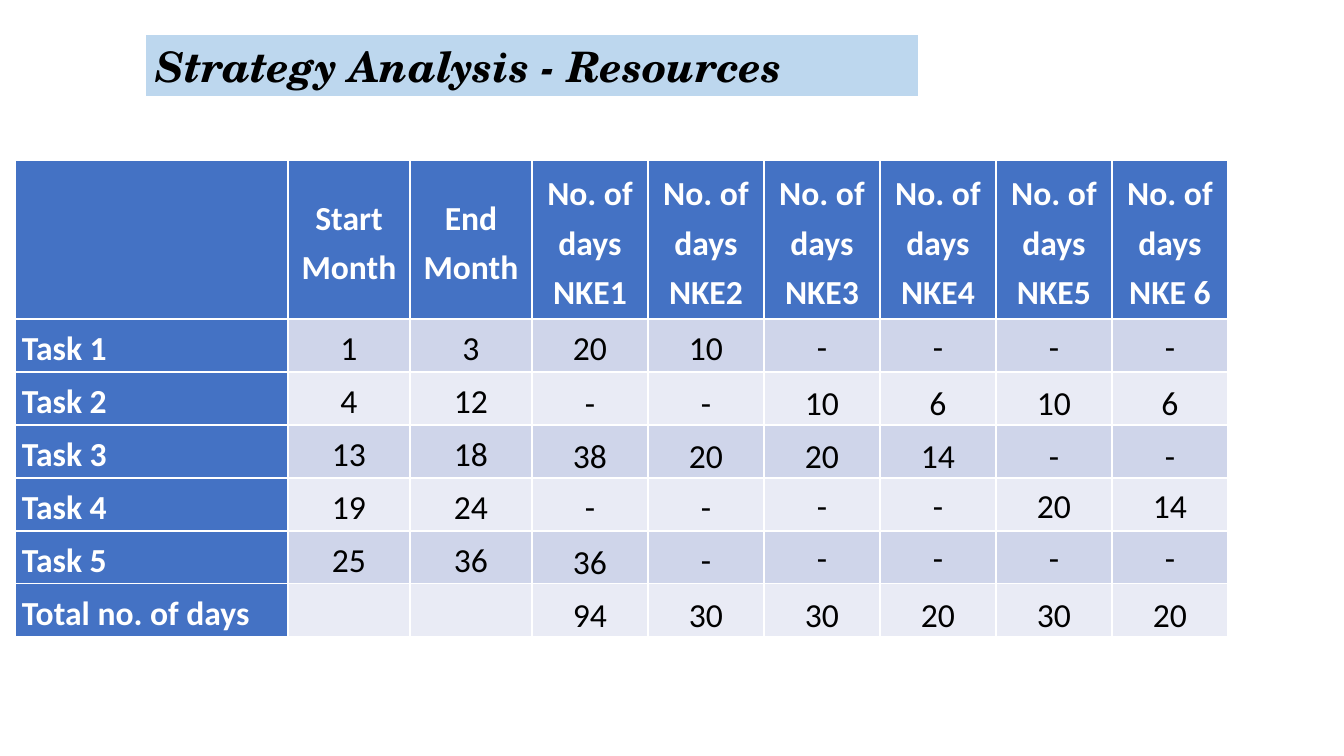
from dataclasses import dataclass

from pptx import Presentation
from pptx import util as u
from pptx.dml.color import RGBColor as Rgb
from pptx.enum import shapes, text

PX = 12192000 / 1344


def px(count):
    return u.Emu(round(count * PX))


@dataclass
class Theme:
    white: str = "FFFFFF"
    black: str = "000000"
    banner: str = "BDD7EE"
    head: str = "4472C4"
    bands: tuple = ("CFD5EA", "E9EBF5")
    serif: str = "TeX Gyre Schola"
    sans: str = "Calibri"
    large: int = 30
    body: int = 24


class Deck:
    """Draws styled elements on one blank slide."""

    def __init__(self, theme):
        self.theme = theme
        self.file = Presentation()
        self.file.slide_width, self.file.slide_height = px(1344), px(756)
        self.slide = self.file.slides.add_slide(self.file.slide_layouts[6])

    def fill(self, item, color):
        item.fill.solid()
        item.fill.fore_color.rgb = Rgb.from_string(color)

    def style(self, para, name, size, color, bold, slant=False):
        for run in para.runs:
            font = run.font
            font.name, font.size = name, u.Pt(size)
            font.bold, font.italic = bold, slant
            font.color.rgb = Rgb.from_string(color)

    def title(self, words, *box):
        look = self.theme
        shape = self.slide.shapes.add_shape(
            shapes.MSO_SHAPE.RECTANGLE, *map(px, box))
        shape.shadow.inherit = False
        shape.line.fill.background()
        self.fill(shape, look.banner)
        frame = shape.text_frame
        frame.text = words
        frame.word_wrap = True
        frame.auto_size = text.MSO_AUTO_SIZE.SHAPE_TO_FIT_TEXT
        para = frame.paragraphs[0]
        para.alignment = text.PP_ALIGN.LEFT
        self.style(para, look.serif, look.large, look.black, True, True)

    def table(self, left, top, widths, heights, rows, anchors):
        table = self.slide.shapes.add_table(
            len(rows), len(widths), px(left), px(top),
            px(sum(widths)), px(sum(heights))).table
        table.first_col = True
        for col, width in zip(table.columns, widths):
            col.width = px(width)
        for row, height in zip(table.rows, heights):
            row.height = px(height)
        for r, (row, marks) in enumerate(zip(rows, anchors)):
            for c, (words, mark) in enumerate(zip(row, marks)):
                self.cell(table.cell(r, c), words, mark, r, c)

    def cell(self, cell, words, mark, r, c):
        look = self.theme
        head = r == 0 or c == 0
        self.fill(cell, look.head if head else look.bands[(r - 1) % 2])
        if not words:
            return
        cell.margin_left = cell.margin_right = px(7)
        cell.margin_top = cell.margin_bottom = 0
        cell.vertical_anchor = ANCHORS[mark]
        cell.text_frame.text = words
        para = cell.text_frame.paragraphs[0]
        para.alignment = (text.PP_ALIGN.CENTER if c else text.PP_ALIGN.JUSTIFY)
        para.line_spacing = 1.2
        para.space_before = para.space_after = u.Pt(6)
        color = look.white if head else look.black
        self.style(para, look.sans, look.body, color, head)


ANCHORS = {
    "t": text.MSO_ANCHOR.TOP,
    "m": text.MSO_ANCHOR.MIDDLE,
    "b": text.MSO_ANCHOR.BOTTOM,
}
STAFF = ["NKE1", "NKE2", "NKE3", "NKE4", "NKE5", "NKE 6"]
ROWS = [
    ["", "Start Month", "End Month"] + [f"No. of days {name}" for name in STAFF],
    ["Task 1", "1", "3", "20", "10", "-", "-", "-", "-"],
    ["Task 2", "4", "12", "-", "-", "10", "6", "10", "6"],
    ["Task 3", "13", "18", "38", "20", "20", "14", "-", "-"],
    ["Task 4", "19", "24", "-", "-", "-", "-", "20", "14"],
    ["Task 5", "25", "36", "36", "-", "-", "-", "-", "-"],
    ["Total no. of days", "", "", "94", "30", "30", "20", "30", "20"],
]
MARKS = ["mmmmmmmmm", "mmmmmtttt", "mmmbbbbbb", "mmmbbbbbb",
         "mmmmmtttt", "mmmbmtttt", "mmmbbbbbb"]


def main():
    deck = Deck(Theme())
    deck.title("Strategy Analysis - Resources", 146, 35, 772, 61)
    deck.table(15, 160, [273] + [122] * 2 + [116] * 6,
               [159] + [53] * 6, ROWS, MARKS)
    deck.file.save("out.pptx")


if __name__ == "__main__":
    main()
